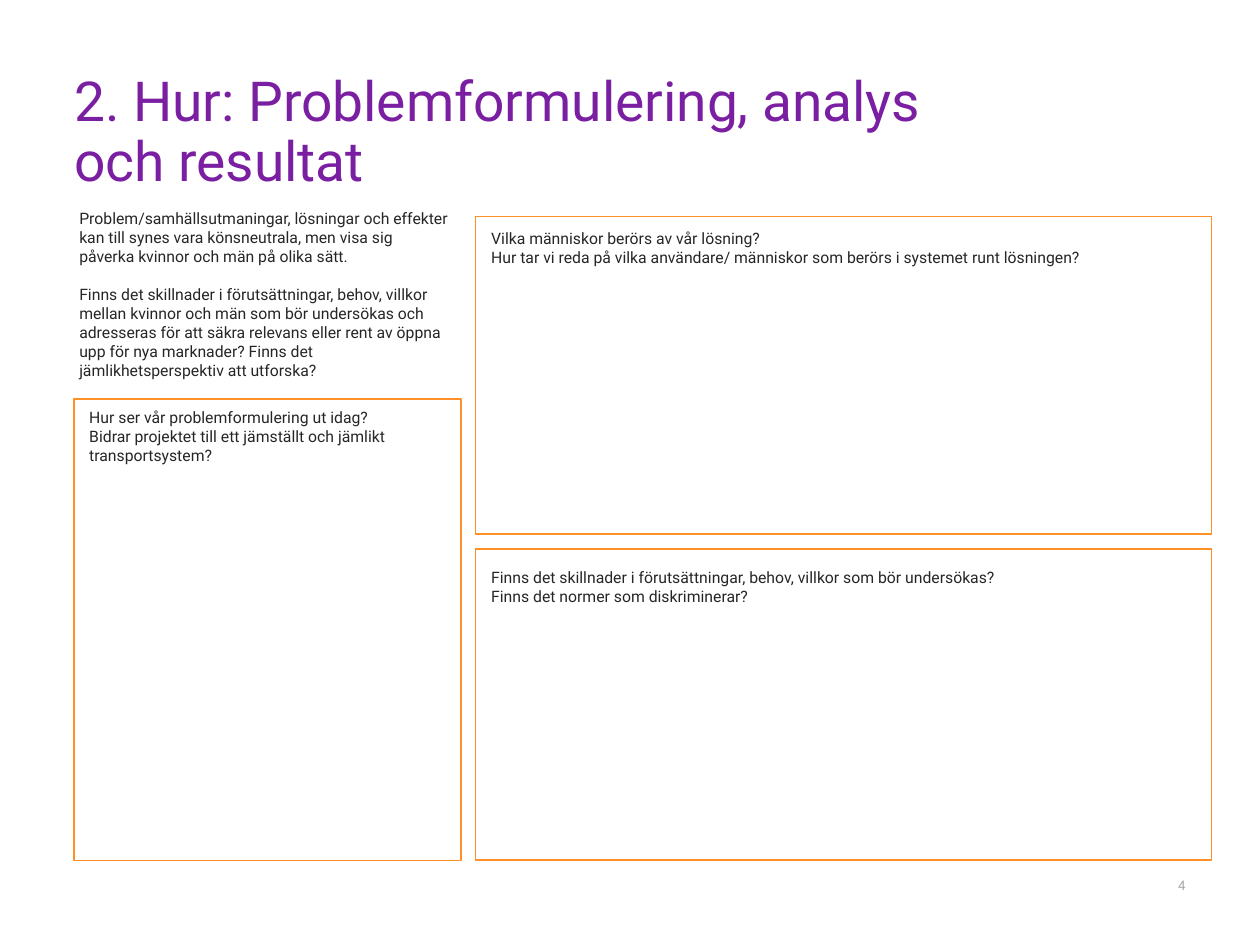
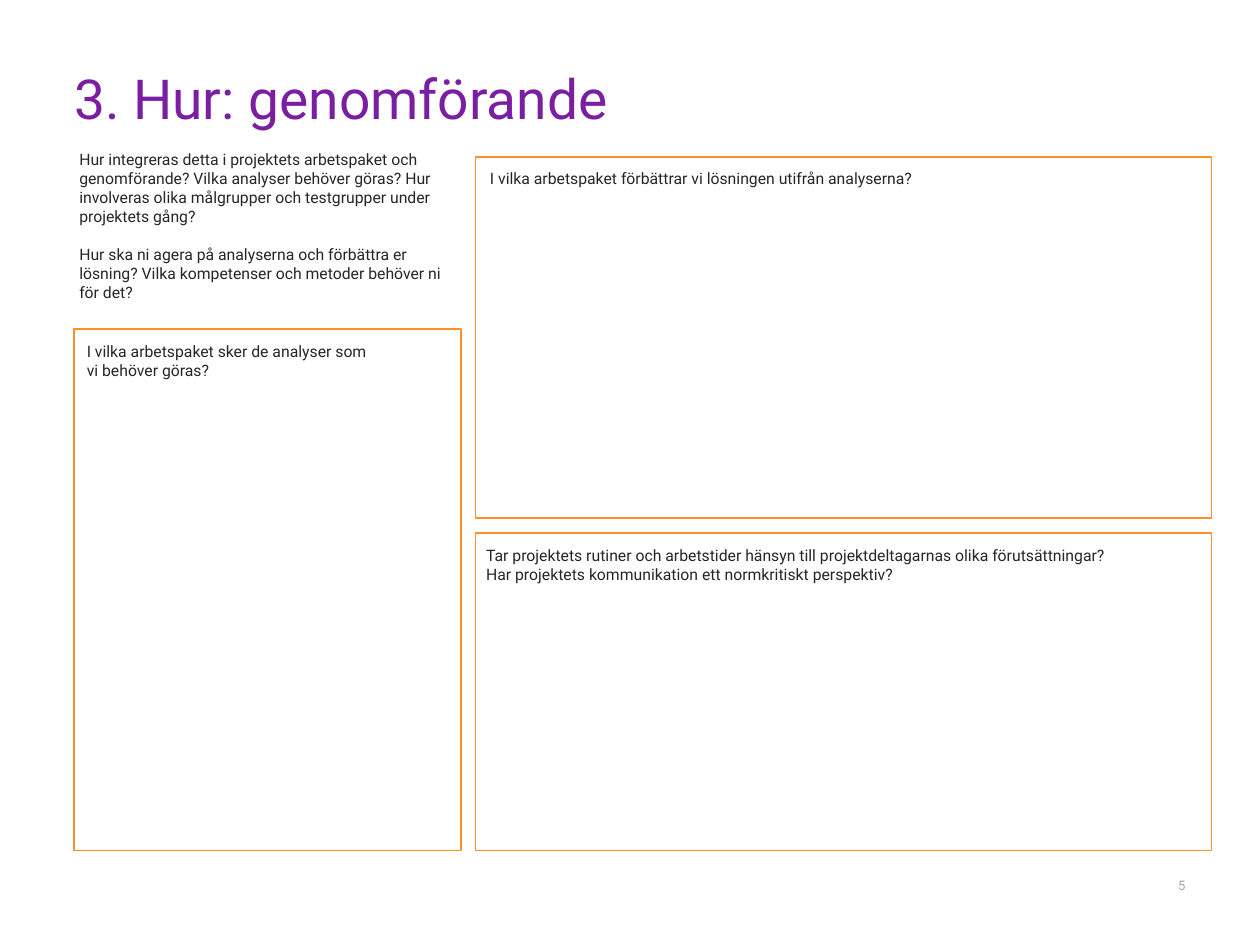
import dataclasses

import pptx
import pptx.dml.color
import pptx.enum.shapes
import pptx.enum.text
import pptx.util

Pt = pptx.util.Pt
ALIGN = pptx.enum.text.PP_ALIGN

COLORS = {"title": "7B1FA2", "body": "262626", "number": "A6A6A6", "frame": "FF9027"}
FONT = "Roboto"
FORMATS = {
    "title": {"name": FONT, "size": Pt(31.5), "bold": False},
    "body": {"name": FONT, "size": Pt(9)},
    "number": {"name": FONT, "size": Pt(7.5)},
}
FLUSH = (0, 0)
PADDED = (7.2, 3.6)

# The two columns of answer frames
LEFT_X, LEFT_W = 42.5, 221
RIGHT_X, RIGHT_W = 271.8, 420.5


@dataclasses.dataclass
class Box:
    x: float
    y: float
    w: float
    h: float


@dataclasses.dataclass
class Question:
    frame: Box
    text_box: Box
    lines: list[str]


@dataclasses.dataclass
class Worksheet:
    number: str
    title: str
    title_y: float
    intro_box: Box
    intro: list[str]
    questions: list[Question]


WORKSHEETS = [
    Worksheet(
        "4", "2. Hur: Problemformulering, analys \voch resultat", 42.5,
        Box(38.2, 115.9, 226, 127.4),
        ["Problem/samhällsutmaningar, lösningar och effekter kan till synes vara "
         "könsneutrala, men visa sig påverka kvinnor och män på olika sätt.",
         "Finns det skillnader i förutsättningar, behov, villkor mellan kvinnor och män "
         "som bör undersökas och adresseras för att säkra relevans eller rent av öppna "
         "upp för nya marknader? Finns det jämlikhetsperspektiv att utforska?"],
        [Question(Box(LEFT_X, 228.2, LEFT_W, 263.5), Box(43.9, 229.7, 217.4, 83.5),
                  ["Hur ser vår problemformulering ut idag?",
                   "Bidrar projektet till ett jämställt och jämlikt transportsystem?"]),
         Question(Box(RIGHT_X, 123.8, RIGHT_W, 181.4), Box(273.6, 127.4, 398.9, 28.8),
                  ["Vilka människor berörs av vår lösning?",
                   "Hur tar vi reda på vilka användare/ människor som berörs i systemet "
                   "runt lösningen?"]),
         Question(Box(RIGHT_X, 313.6, RIGHT_W, 177.8), Box(273.6, 321.1, 446.4, 28.8),
                  ["Finns det skillnader i förutsättningar, behov, villkor som bör undersökas?",
                   "Finns det normer som diskriminerar?"])],
    ),
    Worksheet(
        "5", "3. Hur: genomförande", 41,
        Box(38.2, 82.1, 226, 105.1),
        ["Hur integreras detta i projektets arbetspaket och genomförande? Vilka analyser "
         "behöver göras? Hur involveras olika målgrupper och testgrupper under "
         "projektets gång?",
         "Hur ska ni agera på analyserna och förbättra er lösning? Vilka kompetenser och "
         "metoder behöver ni för det?"],
        [Question(Box(LEFT_X, 187.9, LEFT_W, 298.1), Box(42.5, 191.5, 180.7, 28.8),
                  ["I vilka arbetspaket sker de analyser som vi behöver göras?"]),
         Question(Box(RIGHT_X, 89.6, RIGHT_W, 206.6), Box(272.9, 92.9, 306, 28.8),
                  ["I vilka arbetspaket förbättrar vi lösningen utifrån analyserna?"]),
         Question(Box(RIGHT_X, 304.6, RIGHT_W, 181.4), Box(270.7, 308.2, 371.5, 28.8),
                  ["Tar projektets rutiner och arbetstider hänsyn till projektdeltagarnas "
                   "olika förutsättningar? Har projektets kommunikation ett normkritiskt "
                   "perspektiv?"])],
    ),
]


def rgb(key: str) -> pptx.dml.color.RGBColor:
    return pptx.dml.color.RGBColor.from_string(COLORS[key])


def lengths(box: Box) -> list[pptx.util.Length]:
    return [Pt(v) for v in dataclasses.astuple(box)]


def write(sp, lines: list[str], style: str, inset: tuple[float, float] = PADDED,
          align=ALIGN.LEFT, gap: float = 0, spacing: float = 1.0) -> None:
    """Fill a shape with one paragraph per line, gap points apart."""
    tf = sp.text_frame
    side, top = (Pt(v) for v in inset)
    frame_format = {
        "word_wrap": True, "auto_size": pptx.enum.text.MSO_AUTO_SIZE.NONE,
        "vertical_anchor": pptx.enum.text.MSO_ANCHOR.TOP,
        "margin_left": side, "margin_right": side,
        "margin_top": top, "margin_bottom": top,
    }
    for name, value in frame_format.items():
        setattr(tf, name, value)
    for i, line in enumerate(lines):
        p = tf.add_paragraph() if i else tf.paragraphs[0]
        p.text = line
        p.alignment = align
        p.line_spacing = spacing
        p.space_before = Pt(gap if i else 0)
        for r in p.runs:
            for name, value in FORMATS[style].items():
                setattr(r.font, name, value)
            r.font.color.rgb = rgb(style)


def add_text(s, box: Box, lines: list[str], style: str = "body", **options) -> None:
    write(s.shapes.add_textbox(*lengths(box)), lines, style, **options)


def add_title(s, text: str, y: float) -> None:
    sp = s.shapes.title
    sp.left, sp.top, sp.width, sp.height = lengths(Box(42.5, y, 635, 55.4))
    write(sp, [text], "title", inset=FLUSH, spacing=0.9)


def add_frame(s, box: Box) -> None:
    sp = s.shapes.add_shape(pptx.enum.shapes.MSO_SHAPE.RECTANGLE, *lengths(box))
    sp.shadow.inherit = False
    sp.fill.background()
    sp.line.color.rgb = rgb("frame")
    sp.line.width = Pt(1)


def add_worksheet(prs, sheet: Worksheet) -> None:
    s = prs.slides.add_slide(prs.slide_layouts.get_by_name("Title Only"))
    add_title(s, sheet.title, sheet.title_y)
    add_text(s, Box(654.5, 501.1, 23, 10.1), [sheet.number], "number",
             inset=FLUSH, align=ALIGN.RIGHT)
    for question in sheet.questions:
        add_frame(s, question.frame)
    add_text(s, sheet.intro_box, sheet.intro, gap=10.8)
    for question in sheet.questions:
        add_text(s, question.text_box, question.lines)


def main() -> None:
    prs = pptx.Presentation()
    prs.slide_width, prs.slide_height = Pt(720), Pt(540)
    for sheet in WORKSHEETS:
        add_worksheet(prs, sheet)
    prs.save("out.pptx")


if __name__ == "__main__":
    main()
